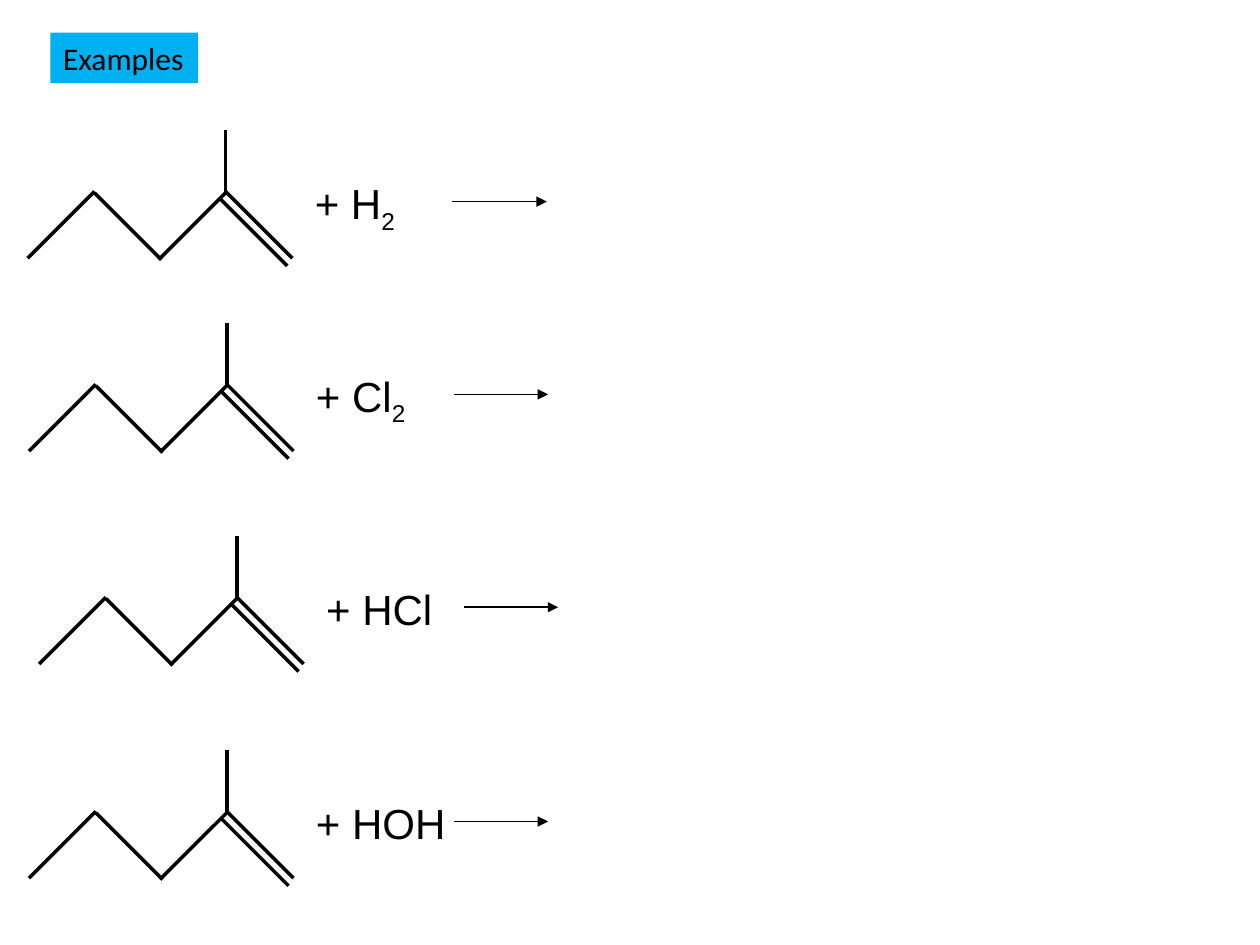
"""Build a slide of four alkene addition reactions awaiting their products."""
from dataclasses import dataclass

from lxml.etree import SubElement
from pptx import Presentation
from pptx.dml.color import RGBColor
from pptx.enum.shapes import MSO_CONNECTOR as Connector
from pptx.enum.text import MSO_ANCHOR as Anchor, MSO_AUTO_SIZE as AutoSize, PP_ALIGN as Align
from pptx.oxml.ns import qn
from pptx.util import Inches, Pt


@dataclass(frozen=True)
class Theme:
    ink: RGBColor = RGBColor(0x00, 0x00, 0x00)
    label_fill: RGBColor = RGBColor(0x00, 0xB0, 0xF0)
    label_font: str = "Calibri"
    label_size: Pt = Pt(18)
    formula_font: str = "Arial"
    formula_size: Pt = Pt(24)
    bond_width: Pt = Pt(2)
    arrow_width: Pt = Pt(1)


theme = Theme()


def draw_line(group, left, top, ends, width):
    x1, y1, x2, y2 = ends
    line = group.shapes.add_connector(
        Connector.STRAIGHT,
        Inches(left + x1), Inches(top + y1), Inches(left + x2), Inches(top + y2),
    )
    line.line.color.rgb = theme.ink
    line.line.width = width
    SubElement(line._element.spPr, qn("a:effectLst"))
    return line


def style_run(run, font, size):
    run.font.name = font
    run.font.size = size
    run.font.color.rgb = theme.ink


presentation = Presentation()
presentation.slide_width = Inches(10)
presentation.slide_height = Inches(7.5)
slide = presentation.slides.add_slide(presentation.slide_layouts[5])

heading = slide.shapes.title
heading.left, heading.top = Inches(0.4), Inches(0.26)
heading.width, heading.height = Inches(1.17), Inches(0.4)
heading.fill.solid()
heading.fill.fore_color.rgb = theme.label_fill
heading.text_frame.text = "Examples"
heading.text_frame.word_wrap = False
heading.text_frame.auto_size = AutoSize.NONE
heading.text_frame.vertical_anchor = Anchor.MIDDLE
heading.text_frame.paragraphs[0].alignment = Align.LEFT
style_run(heading.text_frame.paragraphs[0].runs[0], theme.label_font, theme.label_size)

bonds = [
    (0.53, 0.49, 0, 1.02),
    (0.53, 0.5, 1.06, 1.03),
    (1.57, 0.5, 1.04, 1.03),
    (1.57, 0, 1.57, 0.5),
    (1.57, 0.49, 2.1, 1.02),
    (1.53, 0.55, 2.06, 1.08),
]
reaction_arrow = (3.37, 0.57, 4.12, 0.57)

reactions = [
    (0.22, 1.03, "+ H", "2", 0.86),
    (0.23, 2.56, "+ Cl", "2", 0.93),
    (0.31, 4.25, "+ HCl", "", 1.05),
    (0.23, 5.95, "+ HOH", "", 1.24),
]

for left, top, formula, subscript, formula_width in reactions:
    reaction = slide.shapes.add_group_shape()
    for bond in bonds:
        draw_line(reaction, left, top, bond, theme.bond_width)

    arrow = draw_line(reaction, left, top, reaction_arrow, theme.arrow_width)
    SubElement(arrow.line._ln, qn("a:tailEnd"), type="triangle")

    reagent = reaction.shapes.add_textbox(
        Inches(left + 2.18), Inches(top + 0.33), Inches(formula_width), Inches(0.5)
    )
    reagent.text_frame.word_wrap = False
    reagent.text_frame.auto_size = AutoSize.SHAPE_TO_FIT_TEXT
    reagent.text_frame.text = formula
    paragraph = reagent.text_frame.paragraphs[0]
    if subscript:
        index = paragraph.add_run()
        index.text = subscript
        index.font._element.set("baseline", "-25000")
    for run in paragraph.runs:
        style_run(run, theme.formula_font, theme.formula_size)

presentation.save("out.pptx")
